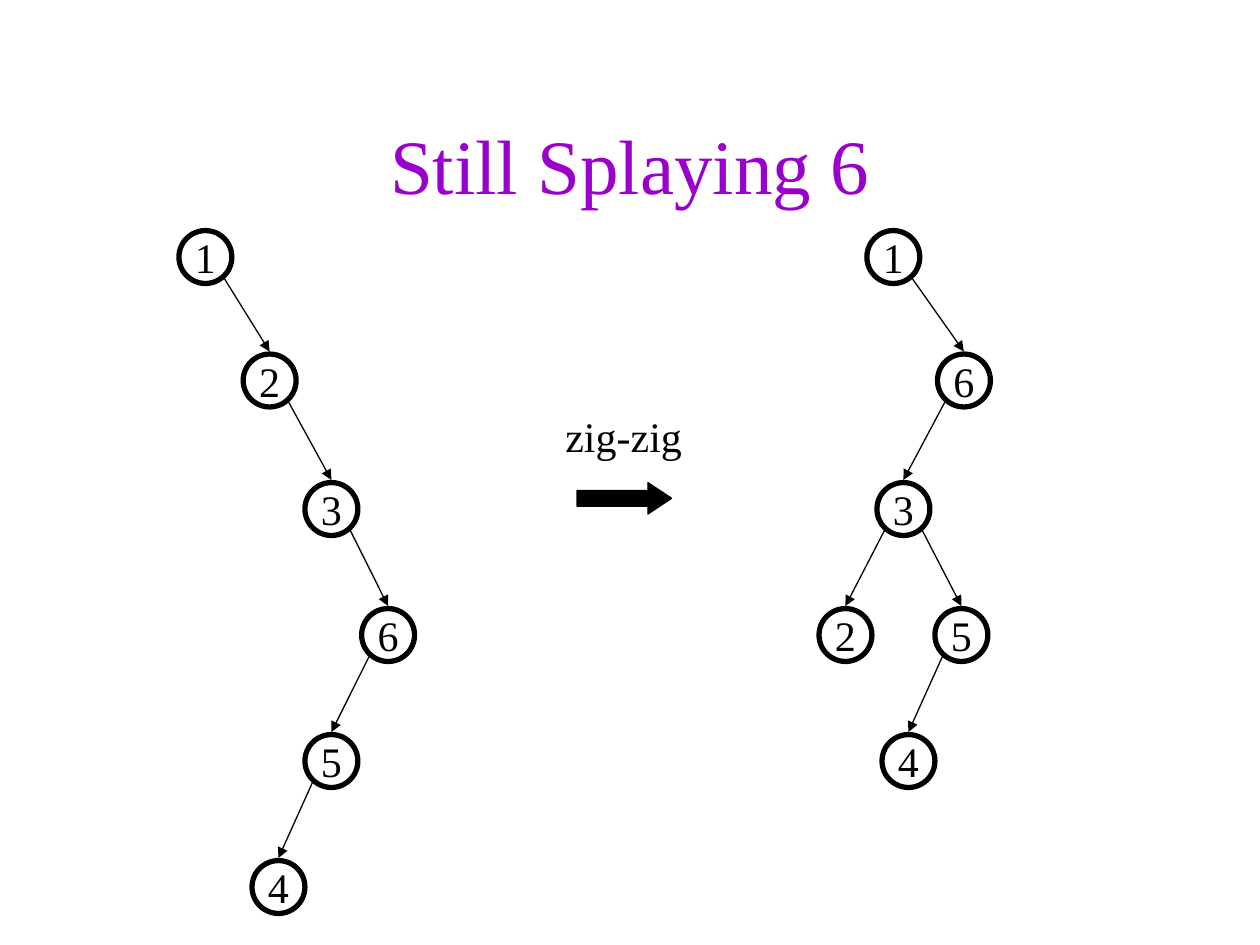
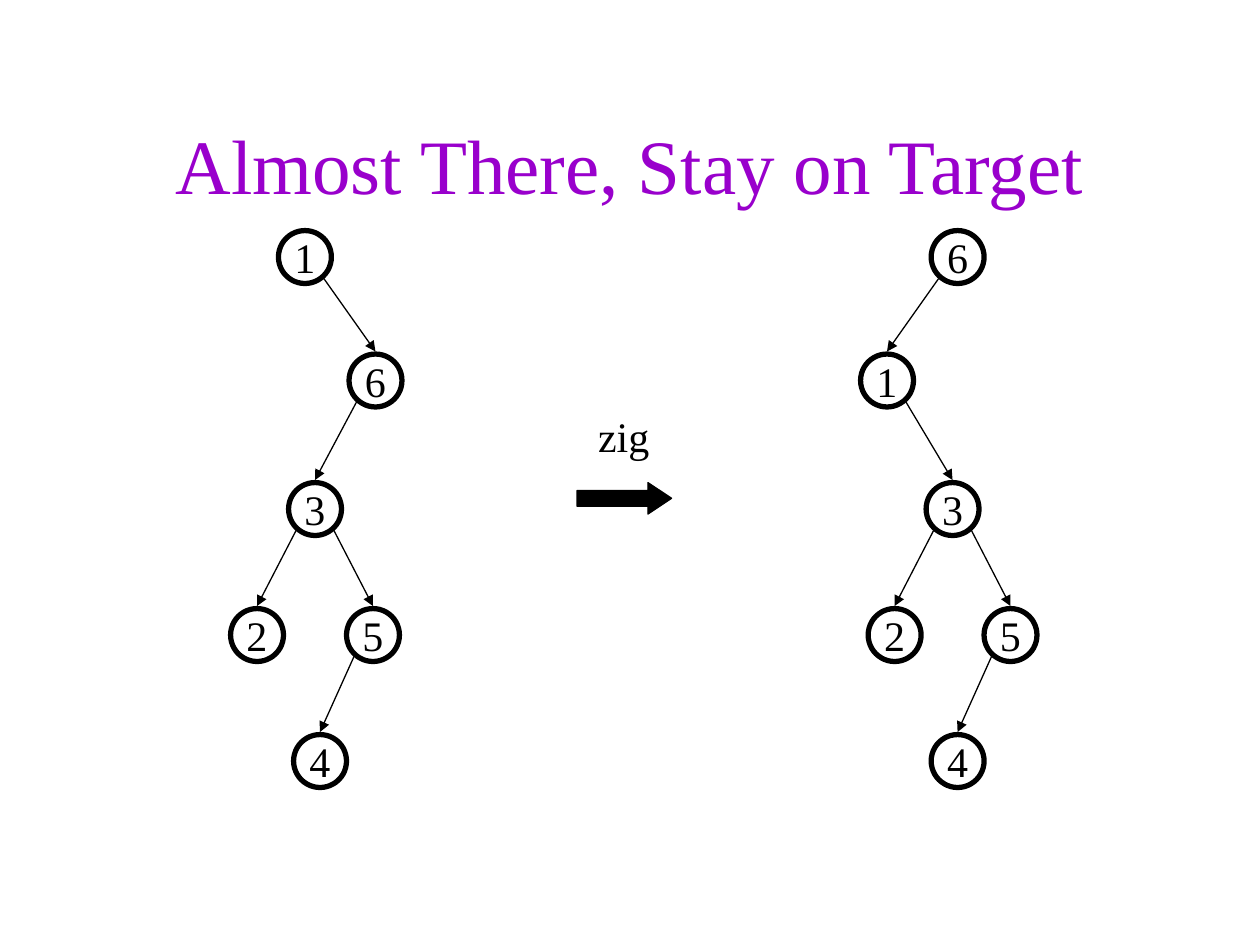
from lxml.etree import SubElement
from pptx import Presentation
from pptx.dml.color import RGBColor
from pptx.enum.shapes import MSO_CONNECTOR, MSO_SHAPE
from pptx.enum.text import MSO_ANCHOR, MSO_AUTO_SIZE, PP_ALIGN
from pptx.oxml.ns import qn
from pptx.util import Inches, Pt

COLORS = {"title": "9900CC", "ink": "000000"}
FONT = "Times New Roman"
SIZE = 0.42  # node diameter
LEVELS = [0, 0.98, 2, 3, 4, 5]  # node tops, from the top of the tree
TOP = 1.83

# Each tree: label -> (left within the tree, level), then parent-child pairs
TRUNK = {"3": (0.46, 2), "2": (0, 3), "5": (0.92, 3), "4": (0.5, 4)}
LINKS = ["32", "35", "54"]
CHAIN = ({"1": (0, 0), "2": (0.51, 1), "3": (1, 2),
          "6": (1.45, 3), "5": (1, 4), "4": (0.58, 5)},
         ["12", "23", "36", "65", "54"])
LOW_SIX = ({"1": (0.38, 0), "6": (0.94, 1), **TRUNK}, ["16", "63", *LINKS])
SIX_ROOT = ({"6": (0.56, 0), "1": (0, 1),
             **{key: (x + 0.06, level) for key, (x, level) in TRUNK.items()}},
            ["61", "13", *LINKS])


def color(name):
    return RGBColor.from_string(COLORS[name])


def put_text(shape, text, size, name, align, anchor, wrap=False):
    frame = shape.text_frame
    frame.word_wrap = wrap
    frame.vertical_anchor = anchor
    para = frame.paragraphs[0]
    para.alignment = align
    run = para.add_run()
    run.text = text
    run.font.size = Pt(size)
    run.font.name = FONT
    run.font.color.rgb = color(name)
    return frame


def add_title(slide, text):
    box = slide.shapes.add_textbox(Inches(0.75), Inches(0.67), Inches(8.5), Inches(1.25))
    put_text(box, text, 44, "title", PP_ALIGN.CENTER, MSO_ANCHOR.MIDDLE, True)


def add_node(slide, left, top, text):
    node = slide.shapes.add_shape(MSO_SHAPE.OVAL, Inches(left), Inches(top),
                                  Inches(SIZE), Inches(SIZE))
    node.shadow.inherit = False
    node.fill.background()
    node.line.color.rgb = color("ink")
    node.line.width = Pt(3)
    put_text(node, text, 24, "ink", PP_ALIGN.CENTER, MSO_ANCHOR.MIDDLE)


def add_edge(slide, start, end):
    """Arrow from the lower side of one node to the top of another."""
    mid = SIZE / 2
    side = 0.15 if end[0] > start[0] else -0.15
    edge = slide.shapes.add_connector(
        MSO_CONNECTOR.STRAIGHT,
        Inches(start[0] + mid + side), Inches(start[1] + 0.38),
        Inches(end[0] + mid), Inches(end[1] - 0.02))
    edge.line.color.rgb = color("ink")
    edge.line.width = Pt(0.75)
    SubElement(edge.line._get_or_add_ln(), qn("a:tailEnd"), type="triangle")
    SubElement(edge._element.spPr, qn("a:effectLst"))


def add_tree(slide, left, top, tree):
    nodes, pairs = tree
    spots = {key: (left + x, top + LEVELS[level]) for key, (x, level) in nodes.items()}
    for parent, child in pairs:
        add_edge(slide, spots[parent], spots[child])
    for key, spot in spots.items():
        add_node(slide, *spot, key)


def add_step(slide, left, top, text, width):
    """Name of the rotation, centred above a block arrow."""
    label = slide.shapes.add_textbox(Inches(left + 0.37 - width / 2), Inches(top),
                                     Inches(width), Inches(0.5))
    frame = put_text(label, text, 24, "ink", PP_ALIGN.CENTER, MSO_ANCHOR.TOP)
    frame.auto_size = MSO_AUTO_SIZE.SHAPE_TO_FIT_TEXT
    arrow = slide.shapes.add_shape(MSO_SHAPE.RIGHT_ARROW, Inches(left), Inches(top + 0.62),
                                   Inches(0.75), Inches(0.25))
    arrow.adjustments[0] = 0.5
    arrow.adjustments[1] = 0.75
    arrow.shadow.inherit = False
    arrow.fill.solid()
    arrow.fill.fore_color.rgb = color("ink")
    arrow.line.color.rgb = color("ink")
    arrow.line.width = Pt(0.75)


def add_splay(deck, title, step, width, before, after):
    """Slide with the tree before and after one rotation."""
    slide = deck.slides.add_slide(deck.slide_layouts[6])
    add_title(slide, title)
    add_step(slide, 4.58, 3.21, step, width)
    for left, tree in (before, after):
        add_tree(slide, left, TOP, tree)


def main():
    deck = Presentation()
    deck.slide_width, deck.slide_height = Inches(10), Inches(7.5)
    add_splay(deck, "Still Splaying 6", "zig-zig", 1.16,
              (1.42, CHAIN), (6.5, LOW_SIX))
    add_splay(deck, "Almost There, Stay on Target", "zig", 0.64,
              (1.83, LOW_SIX), (6.83, SIX_ROOT))
    deck.save("out.pptx")


if __name__ == "__main__":
    main()
